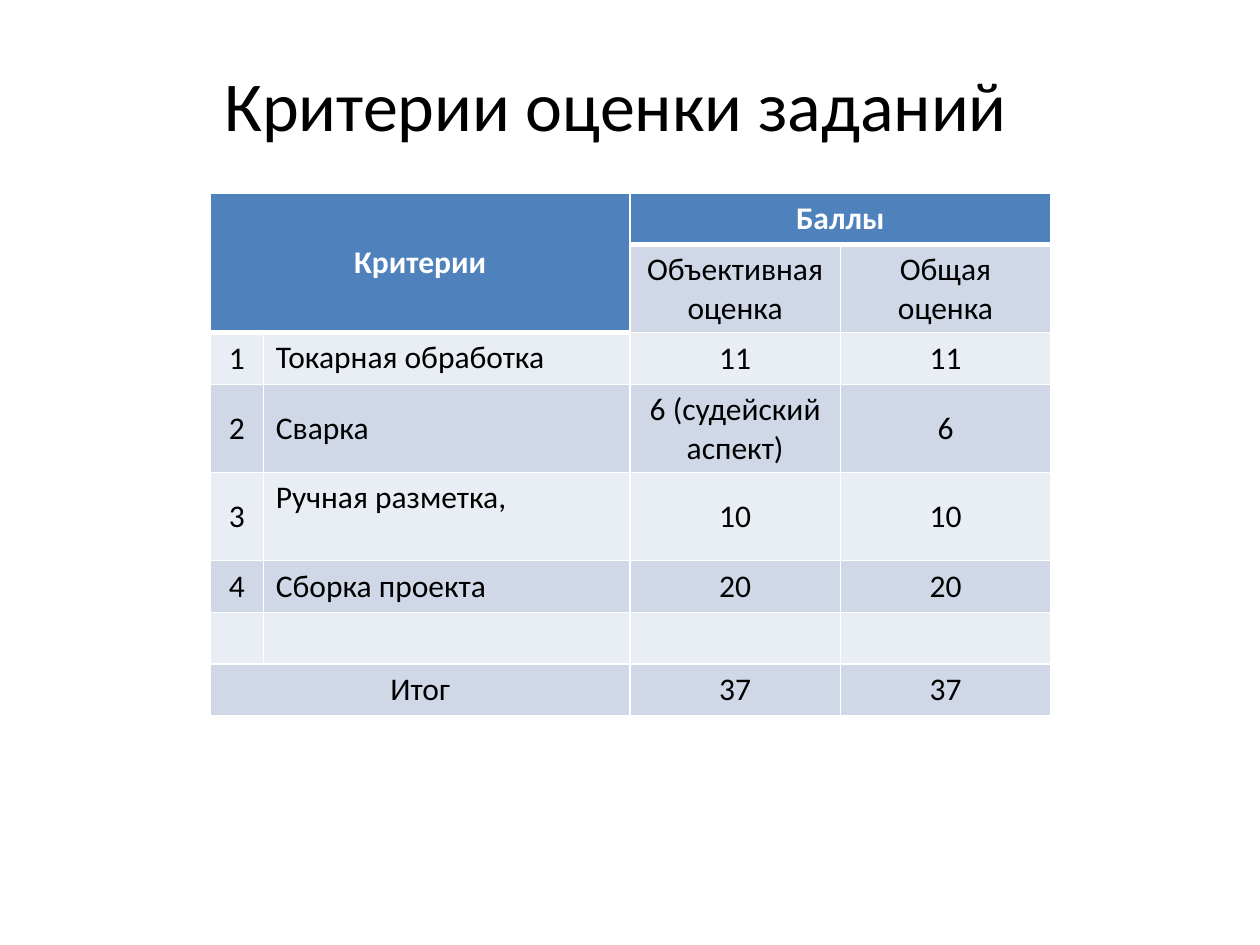
from dataclasses import dataclass

from lxml import etree
from pptx import Presentation, util as u
from pptx.dml.color import RGBColor
from pptx.enum import text
from pptx.oxml.ns import qn


@dataclass(frozen=True)
class Theme:
    """Colours, font and type sizes of the slide."""
    font: str = "Calibri"
    ink: str = "000000"
    paper: str = "FFFFFF"
    header: str = "4F81BD"
    bands: tuple = ("D0D8E8", "E9EDF4")
    title_size: int = 40
    body_size: int = 18
    rule: int = 1
    heavy_rule: int = 3


THEME = Theme()
WIDTH, HEIGHT = u.Inches(10), u.Inches(7.5)
COLUMNS = (0.42, 2.91, 1.67, 1.67)
SINGLE, DOUBLE = 0.41, 0.7
SCORES = (
    (SINGLE, ("Критерии", "", "Баллы", "")),
    (DOUBLE, ("", "", "Объективная оценка", "Общая оценка")),
    (SINGLE, ("1", "Токарная обработка", "11", "11")),
    (DOUBLE, ("2", "Сварка", "6 (судейский аспект)", "6")),
    (DOUBLE, ("3", "Ручная разметка,", "10", "10")),
    (SINGLE, ("4", "Сборка проекта", "20", "20")),
    (SINGLE, ("", "", "", "")),
    (SINGLE, ("Итог", "", "37", "37")),
)
MERGES = (((0, 0), (1, 1)), ((0, 2), (0, 3)), ((7, 0), (7, 1)))
TOP_ALIGNED = {(2, 1), (4, 1), (5, 1)}


def header_depth(column):
    """Return how many rows the header fills in a column."""
    return 2 if column < 2 else 1


def write(paragraph, wording, size, colour, bold=False, centred=True):
    """Add one styled run to a paragraph."""
    paragraph.alignment = text.PP_ALIGN.CENTER if centred else text.PP_ALIGN.LEFT
    run = paragraph.add_run()
    run.text = wording
    run.font.name, run.font.size, run.font.bold = THEME.font, u.Pt(size), bold
    run.font.color.rgb = RGBColor.from_string(colour)


def add_title(slide, wording):
    """Place the centred heading."""
    heading = slide.shapes.add_textbox(
        int(WIDTH * 0.083), int(HEIGHT * 0.059), int(WIDTH * 0.811), int(HEIGHT * 0.103))
    heading.text_frame.word_wrap = True
    write(heading.text_frame.paragraphs[0], wording, THEME.title_size, THEME.ink)


def rule_cell(cell, row, column):
    """Draw the cell's borders, heavier along the header's lower edge."""
    depth = header_depth(column)
    heavy = {"T": row == depth, "B": row < depth}
    properties = cell._tc.get_or_add_tcPr()
    for side in "LRTB":
        points = THEME.heavy_rule if heavy.get(side) else THEME.rule
        line = etree.SubElement(properties, qn(f"a:ln{side}"), w=str(u.Pt(points)))
        fill = etree.SubElement(line, qn("a:solidFill"))
        etree.SubElement(fill, qn("a:srgbClr"), val=THEME.paper)


def style_cell(cell, row, column, wording):
    """Give a cell its borders, band colour and wording."""
    in_header = row < header_depth(column)
    rule_cell(cell, row, column)
    cell.fill.solid()
    cell.fill.fore_color.rgb = RGBColor.from_string(
        THEME.header if in_header else THEME.bands[(row + 1) % 2])
    top = (row, column) in TOP_ALIGNED
    cell.vertical_anchor = text.MSO_ANCHOR.TOP if top else text.MSO_ANCHOR.MIDDLE
    if wording:
        write(cell.text_frame.paragraphs[0], wording, THEME.body_size,
              THEME.paper if in_header else THEME.ink, in_header, column != 1)


def add_scores(slide):
    """Build the table of criteria and points."""
    height = sum(row_height for row_height, _ in SCORES)
    scores = slide.shapes.add_table(
        len(SCORES), len(COLUMNS), int(WIDTH * 0.167), int(HEIGHT * 0.204),
        u.Inches(sum(COLUMNS)), u.Inches(height)).table
    for column, width in zip(scores.columns, COLUMNS):
        column.width = u.Inches(width)
    for row, (row_height, wordings) in enumerate(SCORES):
        scores.rows[row].height = u.Inches(row_height)
        for column, wording in enumerate(wordings):
            style_cell(scores.cell(row, column), row, column, wording)
    for first, last in MERGES:
        scores.cell(*first).merge(scores.cell(*last))


def main():
    """Build and save the slide."""
    deck = Presentation()
    deck.slide_width, deck.slide_height = WIDTH, HEIGHT
    slide = deck.slides.add_slide(deck.slide_layouts[6])
    add_title(slide, "Критерии оценки заданий")
    add_scores(slide)
    deck.save("out.pptx")


if __name__ == "__main__":
    main()
